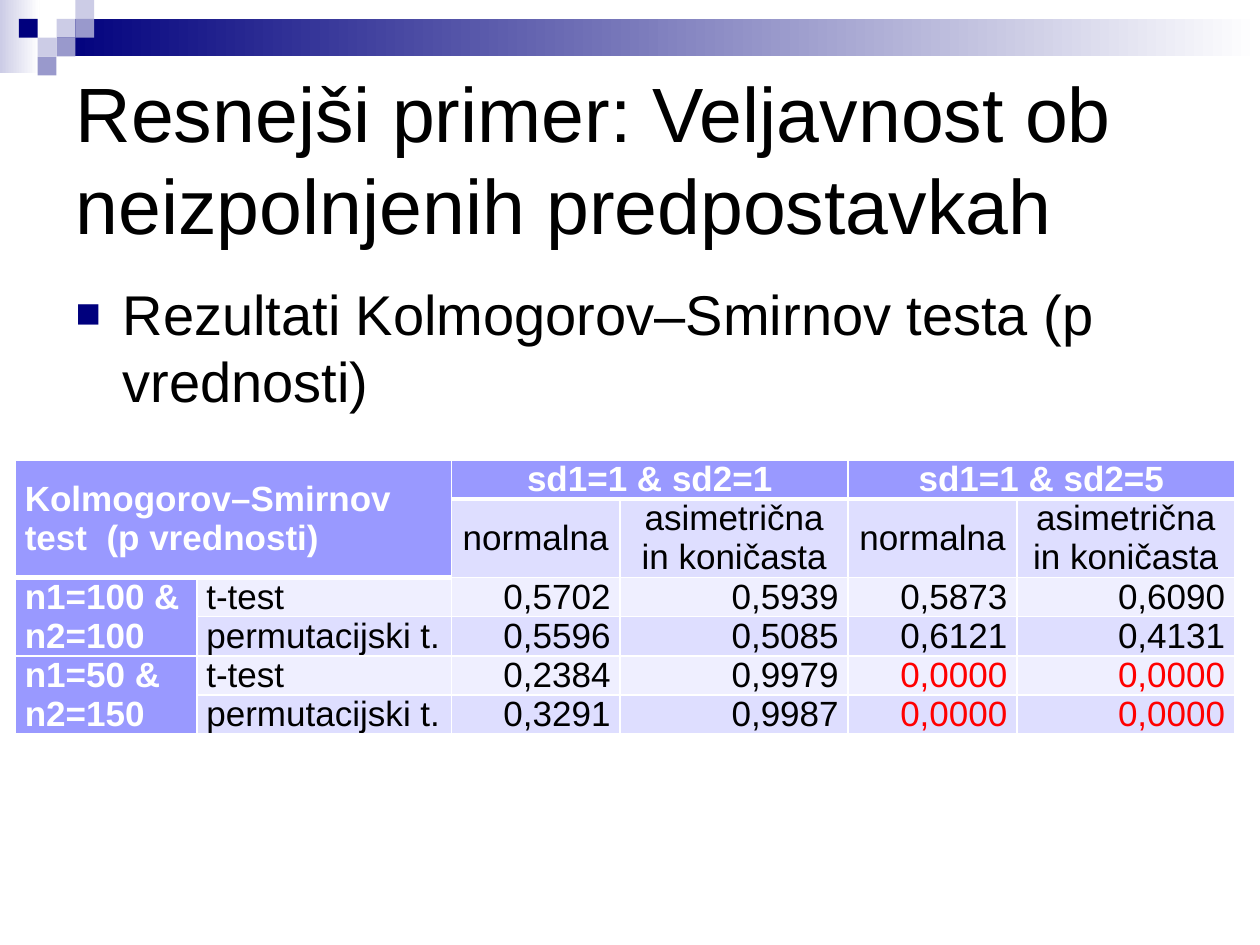
import dataclasses

import pptx
import pptx.dml.color
import pptx.enum.shapes
import pptx.enum.text
import pptx.oxml
import pptx.oxml.ns
import pptx.util

Cm = pptx.util.Cm
Pt = pptx.util.Pt
ALIGN = pptx.enum.text.PP_ALIGN
MIDDLE = pptx.enum.text.MSO_ANCHOR.MIDDLE


@dataclasses.dataclass(frozen=True)
class Theme:
    font: str = "Arial"
    title_size: int = 44
    body_size: int = 32
    table_size: int = 20
    text: str = "000000"
    white: str = "FFFFFF"
    alert: str = "FF0000"
    navy: str = "00007D"
    mid: str = "9999CC"
    pale: str = "CCCCE6"
    header: str = "9999FF"
    band_dark: str = "DEDEFF"
    band_light: str = "EFEFFF"


THEME = Theme()

# Column and row of each small square in the corner mosaic
MOSAIC = [
    (3, 1, THEME.pale), (4, 0, THEME.pale), (4, 1, THEME.mid),
    (2, 2, THEME.pale), (1, 1, THEME.navy), (3, 2, THEME.mid),
    (2, 3, THEME.mid),
]

COLUMN_WIDTHS = [3.66, 5.13, 3.4, 4.6, 3.4, 4.39]
LINE_HEIGHT = 0.79
ROW_LINES = [1, 2, 1, 1, 1, 1]
SHAPES_HEADER = ["normalna", "asimetrična in koničasta"] * 2
SPREADS = ["sd1=1 & sd2=1", "sd1=1 & sd2=5"]
SAMPLE_SIZES = ["n1=100 & n2=100", "n1=50 & n2=150"]
TESTS = ["t-test", "permutacijski t."]
P_VALUES = [
    ["0,5702", "0,5939", "0,5873", "0,6090"],
    ["0,5596", "0,5085", "0,6121", "0,4131"],
    ["0,2384", "0,9979", "0,0000", "0,0000"],
    ["0,3291", "0,9987", "0,0000", "0,0000"],
]


def rgb(value):
    return pptx.dml.color.RGBColor.from_string(value)


def style_paragraph(para, size, color=THEME.text, bold=False, align=ALIGN.LEFT):
    para.alignment = align
    para.font.name = THEME.font
    para.font.size = Pt(size)
    para.font.bold = bold
    para.font.color.rgb = rgb(color)


def add_block(page, left, top, width, height, *colors):
    """Add a rectangle, plain for one colour and faded rightwards for two."""
    block = page.shapes.add_shape(
        pptx.enum.shapes.MSO_SHAPE.RECTANGLE,
        Cm(left), Cm(top), Cm(width), Cm(height))
    block.shadow.inherit = False
    block.line.fill.background()
    if len(colors) == 1:
        block.fill.solid()
        block.fill.fore_color.rgb = rgb(colors[0])
    else:
        block.fill.gradient()
        block.fill.gradient_angle = 0
        for stop, color in zip(block.fill.gradient_stops, colors):
            stop.color.rgb = rgb(color)
    page.shapes.title.element.addprevious(block.element)  # behind the text


def add_banner(page, left, top, width, unit):
    add_block(page, left, top, 0.8, 1.47, THEME.pale, THEME.white)
    add_block(page, left + 3 * unit, top + unit, width - 3 * unit, 2 * unit,
              THEME.navy, THEME.white)
    for column, row, color in MOSAIC:
        add_block(page, left + column * unit, top + row * unit, unit, unit, color)


def place(box, left, top, width, height):
    box.left, box.top, box.width, box.height = map(Cm, (left, top, width, height))


def fill_title(page, left, top, width, height):
    box = page.shapes.title
    place(box, left, top, width, height)
    box.text_frame.text = "Resnejši primer: Veljavnost ob neizpolnjenih predpostavkah"
    box.text_frame.vertical_anchor = MIDDLE
    style_paragraph(box.text_frame.paragraphs[0], THEME.title_size)


def fill_body(page, left, top, width, height):
    box = page.placeholders[1]
    place(box, left, top, width, height)
    box.text_frame.text = "Rezultati Kolmogorov–Smirnov testa (p vrednosti)"
    para = box.text_frame.paragraphs[0]
    style_paragraph(para, THEME.body_size)
    set_bullet(para, Cm(0.95))


def set_bullet(para, indent):
    properties = para._p.get_or_add_pPr()
    properties.set("marL", str(indent))
    properties.set("indent", str(-indent))
    namespace = pptx.oxml.ns.nsdecls("a")
    for xml in (
        f'<a:buClr {namespace}><a:srgbClr val="{THEME.navy}"/></a:buClr>',
        f'<a:buSzPct {namespace} val="75000"/>',
        f'<a:buFont {namespace} typeface="{THEME.font}"/>',
        f'<a:buChar {namespace} char="■"/>',
    ):
        properties.append(pptx.oxml.parse_xml(xml))


def set_borders(cell, bottom):
    properties = cell._tc.get_or_add_tcPr()
    namespace = pptx.oxml.ns.nsdecls("a")
    for index, (side, width) in enumerate(
            [("L", 1), ("R", 1), ("T", 1), ("B", bottom)]):
        properties.insert(index, pptx.oxml.parse_xml(
            f'<a:ln{side} {namespace} w="{Pt(width)}"><a:solidFill>'
            f'<a:srgbClr val="{THEME.white}"/></a:solidFill></a:ln{side}>'))


def write_cell(cell, text, fill, color=THEME.text, align=ALIGN.LEFT, bold=False):
    cell.text = text
    cell.vertical_anchor = MIDDLE
    cell.margin_left = cell.margin_right = Cm(0.19)
    cell.margin_top = cell.margin_bottom = 0
    cell.fill.solid()
    cell.fill.fore_color.rgb = rgb(fill)
    style_paragraph(cell.text_frame.paragraphs[0], THEME.table_size,
                    color, bold, align)


def write_header(cell, text, last_cell, align=ALIGN.LEFT):
    cell.merge(last_cell)
    write_cell(cell, text, THEME.header, THEME.white, align, bold=True)


def add_results(page, left, top):
    table = page.shapes.add_table(
        len(ROW_LINES), len(COLUMN_WIDTHS), Cm(left), Cm(top),
        Cm(sum(COLUMN_WIDTHS)), Cm(LINE_HEIGHT * sum(ROW_LINES))).table
    for column, width in zip(table.columns, COLUMN_WIDTHS):
        column.width = Cm(width)
    for row, lines in zip(table.rows, ROW_LINES):
        row.height = Cm(LINE_HEIGHT * lines)

    write_header(table.cell(0, 0), "Kolmogorov–Smirnov test  (p vrednosti)",
                 table.cell(1, 1))
    for column, spread in zip((2, 4), SPREADS):
        write_header(table.cell(0, column), spread, table.cell(0, column + 1),
                     ALIGN.CENTER)
    for column, name in enumerate(SHAPES_HEADER, start=2):
        write_cell(table.cell(1, column), name, THEME.band_dark,
                   align=ALIGN.CENTER)
    for row, sizes in zip((2, 4), SAMPLE_SIZES):
        write_header(table.cell(row, 0), sizes, table.cell(row + 1, 0))
    for row, values in enumerate(P_VALUES, start=2):
        band = THEME.band_dark if row % 2 else THEME.band_light
        write_cell(table.cell(row, 1), TESTS[row % 2], band)
        for column, value in enumerate(values, start=2):
            color = THEME.alert if value == "0,0000" else THEME.text
            write_cell(table.cell(row, column), value, band, color, ALIGN.RIGHT)

    for row in range(len(ROW_LINES)):
        for column in range(len(COLUMN_WIDTHS)):
            under_header = row == 0 or (row == 1 and column < 2)
            set_borders(table.cell(row, column), 3 if under_header else 1)


def main():
    deck = pptx.Presentation()
    deck.slide_width, deck.slide_height = Cm(25.4), Cm(19.05)
    page = deck.slides.add_slide(deck.slide_layouts[1])
    add_banner(page, 0, 0, 25.4, 0.38)
    fill_title(page, 1.27, 1.27, 22.86, 3.81)
    fill_body(page, 1.27, 5.5, 22.86, 10.8)
    add_results(page, 0.31, 9.27)
    deck.save("out.pptx")


if __name__ == "__main__":
    main()
